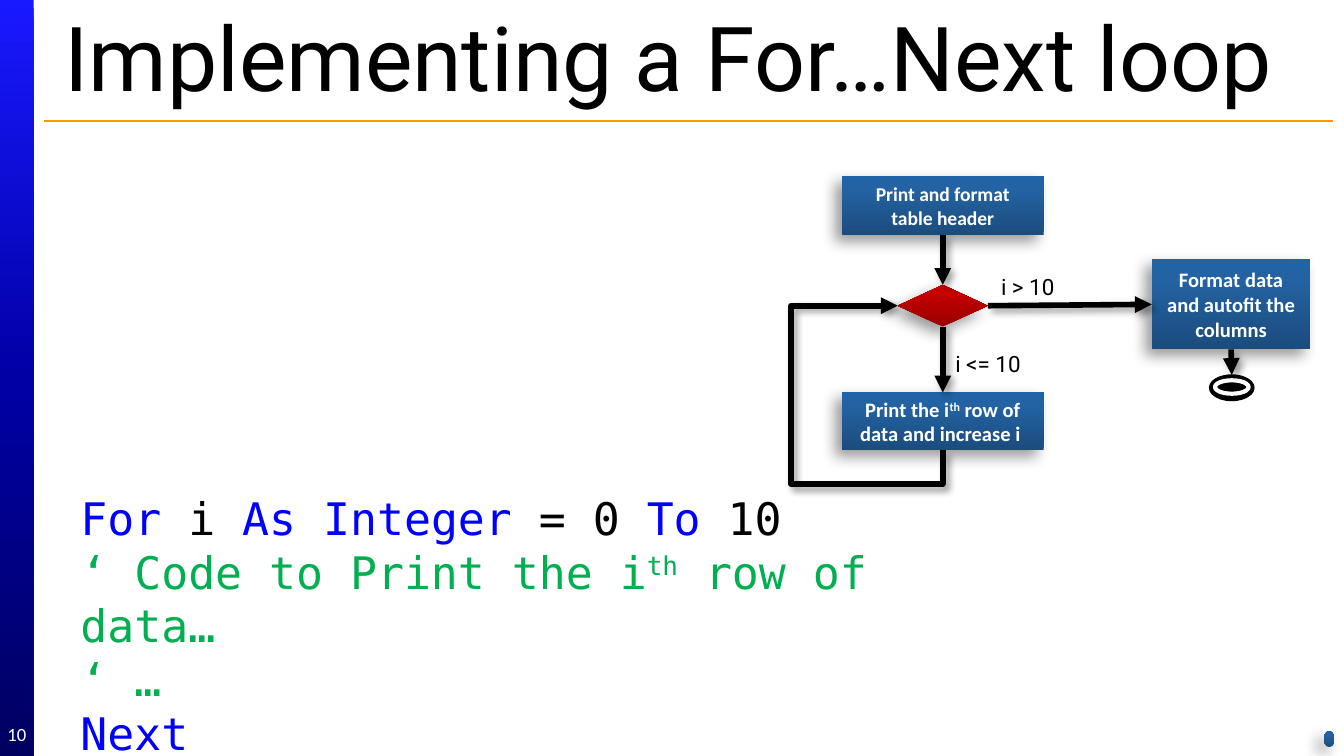
from dataclasses import dataclass
from lxml import etree
from copy import deepcopy
from pptx import Presentation, util as u
from pptx.dml import color
from pptx.enum import shapes, text
from pptx.oxml import ns


@dataclass(frozen=True)
class Theme:
    """Colours, fonts and type sizes of the slide."""
    black: str = "000000"
    white: str = "FFFFFF"
    rule: str = "FF9900"
    keyword: str = "0000FF"
    comment: str = "00B050"
    bar: tuple = ((0, "1919FF"), (50, "0000A5"), (100, "000060"))
    step: tuple = ((0, "1B4C7E"), (80, "2363A3"), (100, "2063A6"))
    decision: tuple = ((0, "980000"), (80, "C60000"), (100, "C70000"))
    heading: str = "Roboto"
    body: str = "Calibri"
    mono: str = "DejaVu Sans Mono"
    title_size: float = 48
    code_size: float = 24
    label_size: float = 12
    step_size: float = 11
    header_size: float = 10.5
    number_size: float = 10


THEME = Theme()
SHAPE = shapes.MSO_SHAPE
CONNECTOR = shapes.MSO_CONNECTOR
PAGE_WIDTH = 10
PAGE_HEIGHT = PAGE_WIDTH * 9 / 16


def rgb(value):
    """Turn a hex string into a colour."""
    return color.RGBColor.from_string(value)


def inside(box, left, top, width, height):
    """Return a box given relative to the corner of another box."""
    return box[0] + left, box[1] + top, width, height


def add_child(parent, tag, **attributes):
    """Append a DrawingML element."""
    child = etree.SubElement(parent, ns.qn(tag))
    for name, value in attributes.items():
        child.set(name, str(value))
    return child


def cast_shadow(effects, blur, distance, angle):
    """Put a soft black shadow in an effect list."""
    shadow = add_child(effects, "a:outerShdw", blurRad=u.Pt(blur), dist=u.Pt(distance),
                       dir=angle * 60000, algn="ctr", rotWithShape=0)
    tint = add_child(shadow, "a:srgbClr", val=THEME.black)
    add_child(tint, "a:alpha", val=40000)


def fill_gradient(shape, stops, angle):
    """Fill a shape with a three-stop linear gradient."""
    shape.fill.gradient()
    shape.fill.gradient_angle = angle
    stop_list = shape._element.spPr.find(".//" + ns.qn("a:gsLst"))
    stop_list.append(deepcopy(stop_list[-1]))
    for stop, (position, value) in zip(shape.fill.gradient_stops, stops):
        stop.color.rgb = rgb(value)
        stop.position = position / 100


def add_plain(page, kind, box):
    """Add a preset shape without shadow, fill or outline."""
    shape = page.shapes.add_shape(kind, *map(u.Inches, box))
    shape.shadow.inherit = False
    shape.fill.background()
    shape.line.fill.background()
    return shape


def add_raised(page, kind, box, stops):
    """Add a gradient shape with a shadow."""
    shape = add_plain(page, kind, box)
    fill_gradient(shape, stops, 90)
    cast_shadow(shape._element.spPr.find(ns.qn("a:effectLst")), 8, 5, 135)
    return shape


def write_spans(para, spans, font, size, bold=False):
    """Write (text, colour) spans; a third item marks a superscript."""
    for content, value, *raised in spans:
        span = para.add_run()
        span.text = content
        span.font.name, span.font.size, span.font.bold = font, u.Pt(size), bold
        span.font.color.rgb = rgb(value)
        if raised:
            span._r.get_or_add_rPr().set("baseline", "30000")


def add_text(page, box, lines, font, size, anchor=text.MSO_ANCHOR.TOP):
    """Add a wrapping text box, one paragraph for each list of spans."""
    frame = page.shapes.add_textbox(*map(u.Inches, box)).text_frame
    frame.word_wrap = True
    frame.vertical_anchor = anchor
    for index, spans in enumerate(lines):
        para = frame.add_paragraph() if index else frame.paragraphs[0]
        write_spans(para, spans, font, size)
    return frame


def add_step(page, box, spans, size):
    """Add a process box with centred bold text."""
    shape = add_raised(page, SHAPE.FLOWCHART_PROCESS, box, THEME.step)
    frame = shape.text_frame
    frame.word_wrap = True
    frame.vertical_anchor = text.MSO_ANCHOR.MIDDLE
    frame.margin_left = frame.margin_right = u.Inches(0.1)
    frame.margin_top = frame.margin_bottom = u.Inches(0.1)
    para = frame.paragraphs[0]
    para.alignment = text.PP_ALIGN.CENTER
    write_spans(para, spans, THEME.body, size, bold=True)
    return shape


def style_arrow(connector):
    """Give a connector a thick black line, an arrowhead and a shadow."""
    connector.line.color.rgb = rgb(THEME.black)
    connector.line.width = u.Pt(3)
    add_child(connector.line._get_or_add_ln(), "a:tailEnd", type="triangle")
    cast_shadow(add_child(connector._element.spPr, "a:effectLst"), 4, 3, 45)


def join(page, source, source_side, target, target_side):
    """Draw a straight arrow between two shapes."""
    connector = page.shapes.add_connector(CONNECTOR.STRAIGHT, 0, 0, 0, 0)
    connector.begin_connect(source, source_side)
    connector.end_connect(target, target_side)
    style_arrow(connector)


def loop_back(page, source, target, drop, reach):
    """Draw an arrow from below the source round to the left of the target."""
    start_x, start_y = source.left + source.width // 2, source.top + source.height
    end_x, end_y = target.left, target.top + target.height // 2
    rise, run = start_y - end_y, start_x - end_x
    left, top = (start_x + end_x - rise) // 2, (start_y + end_y - run) // 2
    connector = page.shapes.add_connector(CONNECTOR.ELBOW, left, top, left + rise, top + run)
    properties = connector._element.spPr
    frame = properties.find(ns.qn("a:xfrm"))
    frame.set("rot", "5400000")
    frame.set("flipH", "1")
    geometry = properties.find(ns.qn("a:prstGeom"))
    geometry.set("prst", "bentConnector4")
    guides = geometry.find(ns.qn("a:avLst"))
    for name, ratio in (("adj1", -u.Inches(drop) / rise), ("adj2", u.Inches(reach) / run)):
        add_child(guides, "a:gd", name=name, fmla=f"val {round(ratio * 100000)}")
    style_arrow(connector)


def build_sidebar(page, box):
    """Place the blue side bar and the page number."""
    fill_gradient(add_plain(page, SHAPE.RECTANGLE, box), THEME.bar, 270)
    frame = add_text(page, inside(box, 0, 5.31, box[2], 0.3), [[("10", THEME.white)]],
                     THEME.body, THEME.number_size, text.MSO_ANCHOR.MIDDLE)
    frame.margin_left = frame.margin_right = frame.margin_top = frame.margin_bottom = 0
    frame.paragraphs[0].alignment = text.PP_ALIGN.CENTER


def build_heading(page, box):
    """Place the title and the rule below it."""
    left, top, width, height = box
    rule = page.shapes.add_connector(CONNECTOR.STRAIGHT, u.Inches(left), u.Inches(top + height),
                                     u.Inches(left + width), u.Inches(top + height))
    rule.line.color.rgb = rgb(THEME.rule)
    rule.line.width = u.Pt(0.75)
    add_child(rule._element.spPr, "a:effectLst")
    add_text(page, inside(box, 0.05, 0.15, 9.58, 0.53),
             [[("Implementing a For…Next loop", THEME.black)]],
             THEME.heading, THEME.title_size, text.MSO_ANCHOR.MIDDLE)


def build_flowchart(page, box):
    """Place the flowchart of the loop."""
    white = THEME.white
    test_left, test_width, step_width = 0.8, 0.67, 1.5
    step_left = test_left + (test_width - step_width) / 2
    header = add_step(page, inside(box, step_left, 0, step_width, 0.44),
                      [("Print and format table header", white)], THEME.header_size)
    test = add_raised(page, SHAPE.FLOWCHART_DECISION,
                      inside(box, test_left, 0.81, test_width, 0.31), THEME.decision)
    row = add_step(page, inside(box, step_left, 1.61, step_width, 0.43),
                   [("Print the i", white), ("th", white, True),
                    (" row of data and increase i ", white)], THEME.step_size)
    finish = add_step(page, inside(box, 2.69, 0.62, 1.18, 0.67),
                      [("Format data and autofit the columns", white)], THEME.step_size)
    end = add_plain(page, SHAPE.OVAL, inside(box, 3.12, 1.48, 0.33, 0.19))
    end.fill.solid()
    end.fill.fore_color.rgb = end.line.color.rgb = rgb(THEME.black)
    end.line.width = u.Pt(0.75)
    ring = add_plain(page, SHAPE.OVAL, inside(box, 3.16, 1.52, 0.25, 0.1))
    ring.line.color.rgb = rgb(white)
    ring.line.width = u.Pt(2.25)
    for link in ((header, 2, test, 0), (test, 2, row, 0), (test, 3, finish, 1),
                 (finish, 2, end, 0)):
        join(page, *link)
    loop_back(page, row, test, 0.25, 1.13)
    for label, left, top, width in (("i <= 10", 1.13, 1.25, 1.83), ("i > 10", 1.47, 0.67, 1.67)):
        add_text(page, inside(box, left, top, width, 0.3), [[(label, THEME.black)]],
                 THEME.heading, THEME.label_size)


def build_code(page, box):
    """Place the code sample."""
    black, keyword, comment = THEME.black, THEME.keyword, THEME.comment
    add_text(page, box, [
        [("For", keyword), (" i ", black), ("As Integer", keyword), (" = 0 ", black),
         ("To", keyword), (" 10", black)],
        [("‘ Code to Print the i", comment), ("th", comment, True), (" row of data…", comment)],
        [("‘ …", comment)],
        [("Next", keyword)]], THEME.mono, THEME.code_size)


def main():
    """Build the deck and save it."""
    deck = Presentation()
    deck.slide_width, deck.slide_height = u.Inches(PAGE_WIDTH), u.Inches(PAGE_HEIGHT)
    page = deck.slides.add_slide(deck.slide_layouts[6])
    build_sidebar(page, (0, 0, 0.25, PAGE_HEIGHT))
    build_heading(page, (0.33, 0, 9.59, 0.9))
    build_flowchart(page, (5.88, 1.31, 3.87, 2.29))
    build_code(page, (0.5, 3.6, 7.09, 1.72))
    add_raised(page, SHAPE.OVAL, (9.85, 5.44, 0.08, 0.12), THEME.step)
    deck.save("out.pptx")


if __name__ == "__main__":
    main()
